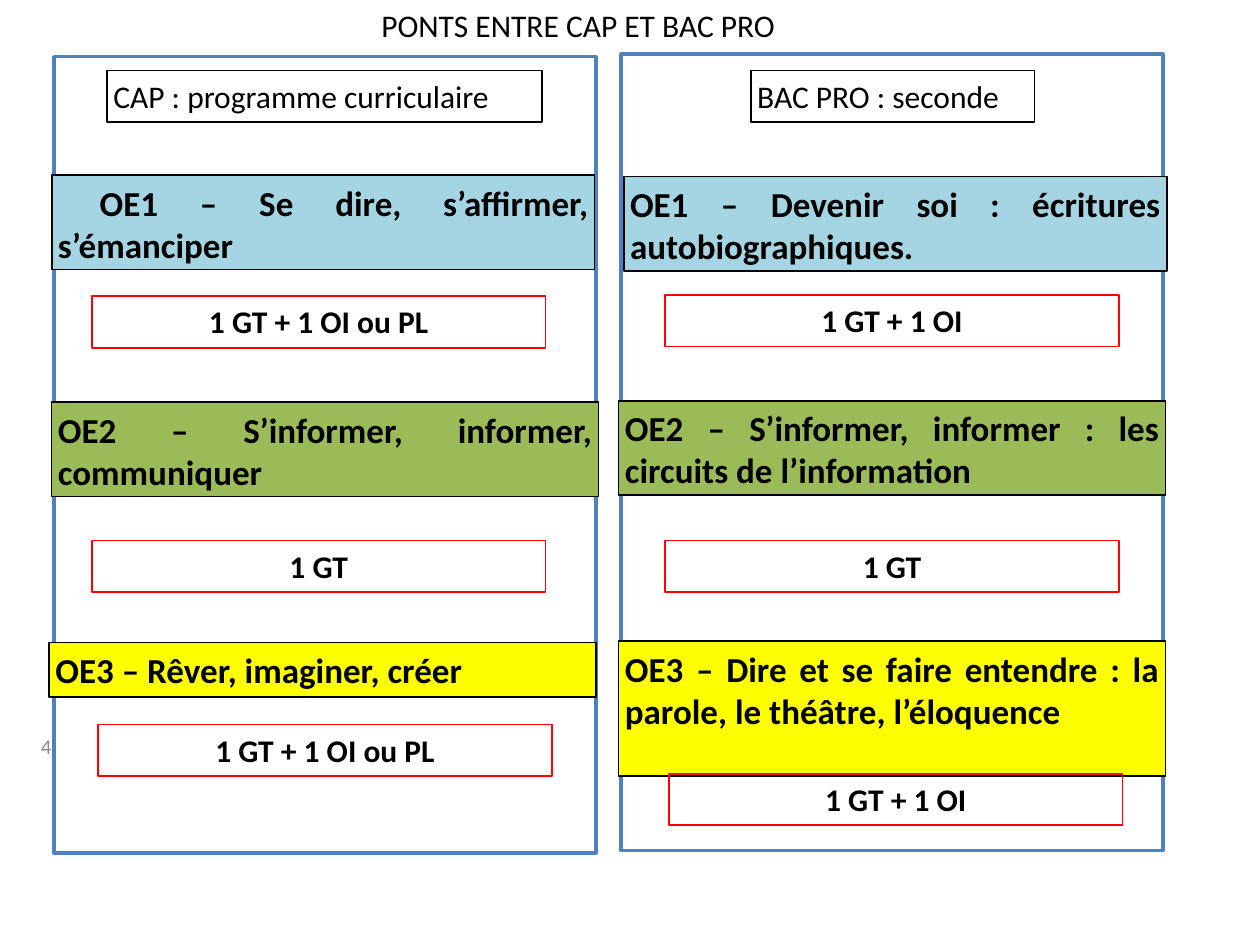
"""Build a slide comparing the CAP and BAC PRO programmes."""
from dataclasses import dataclass

from pptx import Presentation
from pptx.dml.color import RGBColor
from pptx.enum.shapes import MSO_SHAPE as SHAPE
from pptx.enum.text import MSO_ANCHOR as ANCHOR, PP_ALIGN as ALIGN
from pptx.util import Emu, Pt

PX = 9144
BLACK, WHITE, RED, BLUE, GREY = "000000", "FFFFFF", "FF0000", "4F81BD", "888888"
SKY, GREEN, YELLOW = "A5D5E2", "9BBB59", "FFFF00"


@dataclass(frozen=True)
class Box:
    x: int
    y: int
    w: int
    h: int
    text: str = ""


@dataclass(frozen=True)
class Style:
    fill: str | None = None
    line: str | None = BLACK
    width: float = 1
    size: int = 18
    bold: bool = False
    align: ALIGN = ALIGN.LEFT
    color: str = BLACK
    anchor: ANCHOR = ANCHOR.TOP


def px(n: int) -> Emu:
    return Emu(n * PX)


def rgb(color: str) -> RGBColor:
    return RGBColor.from_string(color)


def write(tf, text: str, style: Style) -> None:
    tf.word_wrap = True
    tf.vertical_anchor = style.anchor
    tf.margin_left = tf.margin_right = tf.margin_top = tf.margin_bottom = px(5)
    p = tf.paragraphs[0]
    p.text = text
    p.alignment = style.align
    p.font.name = "Calibri"
    p.font.size = Pt(style.size)
    p.font.bold = style.bold
    p.font.color.rgb = rgb(style.color)


def draw(slide, box: Box, style: Style) -> None:
    frame = [px(n) for n in (box.x, box.y, box.w, box.h)]
    if style.line is None:
        sp = slide.shapes.add_textbox(*frame)
    else:
        sp = slide.shapes.add_shape(SHAPE.RECTANGLE, *frame)
        sp.shadow.inherit = False
        sp.line.color.rgb = rgb(style.line)
        sp.line.width = Pt(style.width)
        if style.fill:
            sp.fill.solid()
            sp.fill.fore_color.rgb = rgb(style.fill)
        else:
            sp.fill.background()
    if box.text:
        write(sp.text_frame, box.text, style)


def theme(fill: str) -> Style:
    return Style(fill=fill, size=20, bold=True, align=ALIGN.JUSTIFY)


PANEL = Style(fill=WHITE, line=BLUE, width=2)
HEADING = Style()
COUNT = Style(line=RED, bold=True, align=ALIGN.CENTER)
TITLE = Style(line=None, align=ALIGN.CENTER)
NUMBER = Style(line=None, size=12, align=ALIGN.RIGHT, color=GREY, anchor=ANCHOR.MIDDLE)

LAYERS = [
    (NUMBER, [Box(26, 578, 20, 29, "4")]),
    (TITLE, [Box(21, 0, 876, 39, "PONTS ENTRE CAP ET BAC PRO")]),
    (PANEL, [Box(43, 45, 430, 632), Box(493, 43, 430, 632)]),
    (HEADING, [
        Box(85, 56, 345, 41, "CAP : programme curriculaire"),
        Box(596, 56, 225, 41, "BAC PRO : seconde"),
    ]),
    (theme(SKY), [
        Box(41, 139, 431, 75, " OE1 – Se dire, s’affirmer, s’émanciper"),
        Box(495, 140, 431, 75, "OE1 – Devenir soi : écritures autobiographiques."),
    ]),
    (theme(GREEN), [
        Box(41, 319, 434, 75, "OE2 – S’informer, informer, communiquer"),
        Box(491, 318, 434, 75, "OE2 – S’informer, informer : les circuits de l’information"),
    ]),
    (theme(YELLOW), [
        Box(39, 510, 434, 43, "OE3 – Rêver, imaginer, créer"),
        Box(491, 509, 434, 107,
            "OE3 – Dire et se faire entendre : la parole, le théâtre, l’éloquence"),
    ]),
    (COUNT, [
        Box(x, y, 360, 41, text)
        for x, y, text in (
            (73, 235, "1 GT + 1 OI ou PL"), (528, 234, "1 GT + 1 OI"),
            (73, 429, "1 GT"), (528, 429, "1 GT"),
            (78, 575, "1 GT + 1 OI ou PL"), (531, 614, "1 GT + 1 OI"),
        )
    ]),
]


def main() -> None:
    prs = Presentation()
    prs.slide_width, prs.slide_height = px(1000), px(750)
    s = prs.slides.add_slide(prs.slide_layouts[6])
    for style, boxes in LAYERS:
        for box in boxes:
            draw(s, box, style)
    prs.save("out.pptx")


if __name__ == "__main__":
    main()
